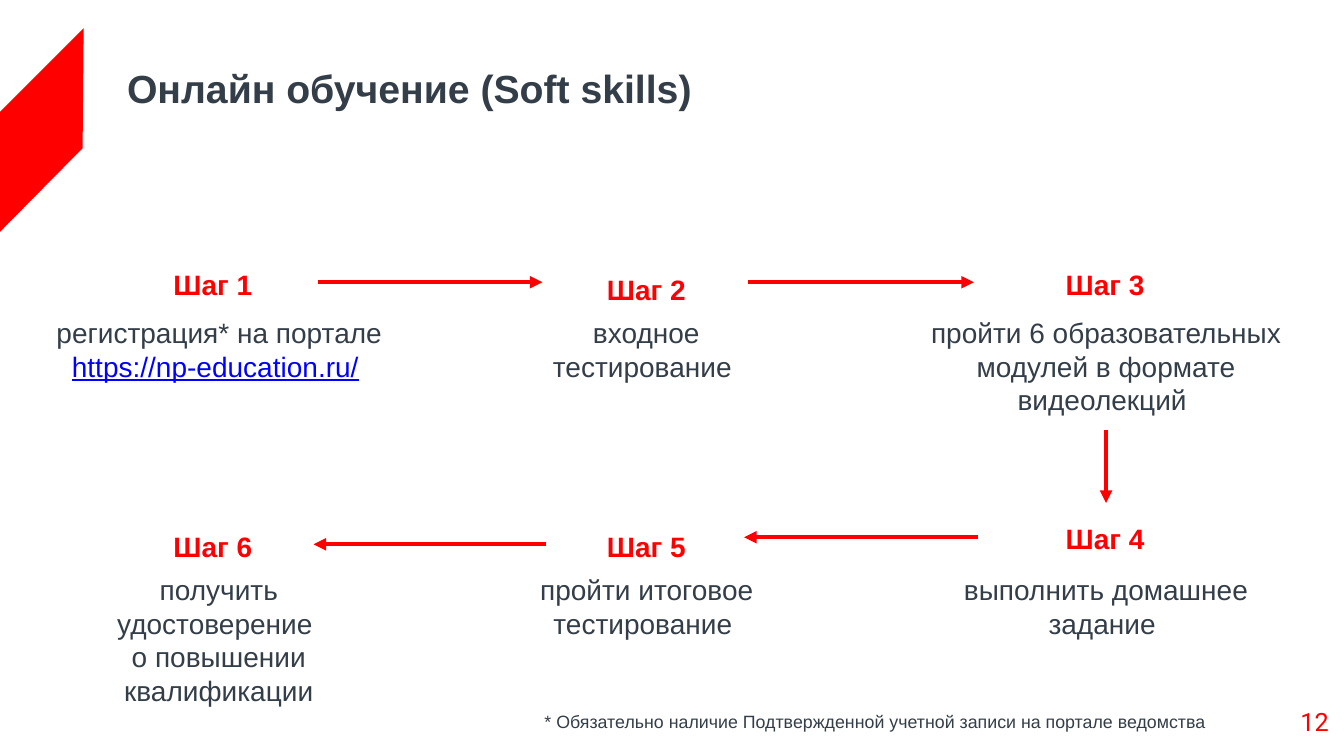
import pptx
import pptx.util
import pptx.dml.color
import pptx.enum.shapes
import pptx.enum.text
import pptx.oxml.ns
from lxml import etree

Inches = pptx.util.Inches
ALIGN = pptx.enum.text.PP_ALIGN
AUTO = pptx.enum.text.MSO_AUTO_SIZE
A = pptx.oxml.ns.qn
RED, DARK, BLUE = "FF0000", "333E48", "0000FF"


def color(value):
    return pptx.dml.color.RGBColor.from_string(value)


def write(sp, box, runs, size, align=ALIGN.LEFT, name="Arial", wrap=True,
          auto=AUTO.SHAPE_TO_FIT_TEXT, anchor=pptx.enum.text.MSO_ANCHOR.TOP):
    """Place sp at box and fill it with runs of (text, color, extra font values)."""
    for attr, value in zip(("left", "top", "width", "height"), box):
        setattr(sp, attr, Inches(value))
    tf = sp.text_frame
    frame = {"word_wrap": wrap, "auto_size": auto, "vertical_anchor": anchor}
    frame.update({"margin_" + side: Inches(0.05) for side in ("left", "top", "right", "bottom")})
    for attr, value in frame.items():
        setattr(tf, attr, value)
    p = tf.paragraphs[0]
    p.alignment = align
    for text, fill, extra in runs:
        for i, line in enumerate(text.split("\n")):
            if i:
                p.add_line_break()
            r = p.add_run()
            r.text = line
            r.font.color.rgb = color(fill)
            font = {"name": name, "size": pptx.util.Pt(size), **extra}
            for attr, value in font.items():
                setattr(r.font, attr, value)
    return p


prs = pptx.Presentation()
prs.slide_width, prs.slide_height = Inches(13.33), Inches(7.5)
s = prs.slides.add_slide(prs.slide_layouts[1])

# Red band at the left edge
outline = [(0, 1.11), (0.83, 0.28), (0.82, 1.47), (0, 2.3)]
points = [(Inches(x), Inches(y)) for x, y in outline]
builder = s.shapes.build_freeform(*points[0])
builder.add_line_segments(points[1:], close=True)
band = builder.convert_to_shape()
band.shadow.inherit = False
band.fill.solid()
band.fill.fore_color.rgb = color(RED)
band.line.fill.background()

# Title and footnote
p = write(s.shapes.title, (1.21, 0.4, 8.81, 1),
          [("Онлайн обучение (Soft skills)", DARK, {"bold": True})], 28,
          auto=AUTO.NONE, anchor=pptx.enum.text.MSO_ANCHOR.MIDDLE)
p.line_spacing = 0.9

p = write(s.placeholders[1], (5.35, 7, 6.94, 0.37),
          [("* Обязательно наличие Подтвержденной учетной записи на портале ведомства", DARK, {})],
          12.7, align=ALIGN.JUSTIFY, auto=AUTO.NONE)
p.space_before = pptx.util.Pt(0)
pPr = p._p.get_or_add_pPr()
pPr.set("marL", "0")
pPr.set("indent", "0")
etree.SubElement(pPr, A("a:buNone"))

# Steps: heading left and top, then text box and its runs
steps = [
    (1.67, 2.6, (0.24, 3.08, 3.87, 1.05),
     [("регистрация* на портале ", DARK, {}),
      ("https://np-education.ru/", BLUE, {"underline": True}),
      (" ", DARK, {})]),
    (5.97, 2.65, (5.07, 3.08, 2.68, 0.73), [("входное тестирование ", DARK, {})]),
    (10.52, 2.6, (9.11, 3.08, 3.72, 1.05),
     [("пройти 6 образовательных модулей в формате видеолекций ", DARK, {})]),
    (10.52, 5.12, (9.11, 5.63, 3.72, 0.73), [("выполнить домашнее задание ", DARK, {})]),
    (5.97, 5.2, (5, 5.63, 2.83, 0.73), [("пройти итоговое тестирование ", DARK, {})]),
    (1.67, 5.2, (0.62, 5.63, 3.1, 1.37),
     [("получить удостоверение \nо повышении квалификации", DARK, {})]),
]
for number, (left, top, box, runs) in enumerate(steps, 1):
    write(s.shapes.add_textbox(0, 0, 0, 0), (left, top, 0.89, 0.41),
          [(f"Шаг {number}", RED, {"bold": True})], 20, wrap=False)
    write(s.shapes.add_textbox(0, 0, 0, 0), box, runs, 20, align=ALIGN.CENTER)

# Arrows between the steps
arrows = [
    (3.15, 2.8, 5.38, 2.8),
    (7.42, 2.8, 9.66, 2.8),
    (10.97, 4.27, 10.97, 4.99),
    (9.7, 5.33, 7.38, 5.33),
    (5.42, 5.4, 3.11, 5.4),
]
for ends in arrows:
    arrow = s.shapes.add_connector(pptx.enum.shapes.MSO_CONNECTOR.STRAIGHT, *map(Inches, ends))
    arrow.line.color.rgb = color(RED)
    arrow.line.width = pptx.util.Pt(3)
    etree.SubElement(arrow.line._get_or_add_ln(), A("a:tailEnd"), type="triangle")
    etree.SubElement(arrow._element.spPr, A("a:effectLst"))

# Slide number, in a box wide enough for two digits
write(s.shapes.add_textbox(0, 0, 0, 0), (12.63, 6.96, 0.6, 0.39),
      [("12", RED, {})], 18, align=ALIGN.RIGHT, name="Roboto", auto=AUTO.NONE)

prs.save("out.pptx")
